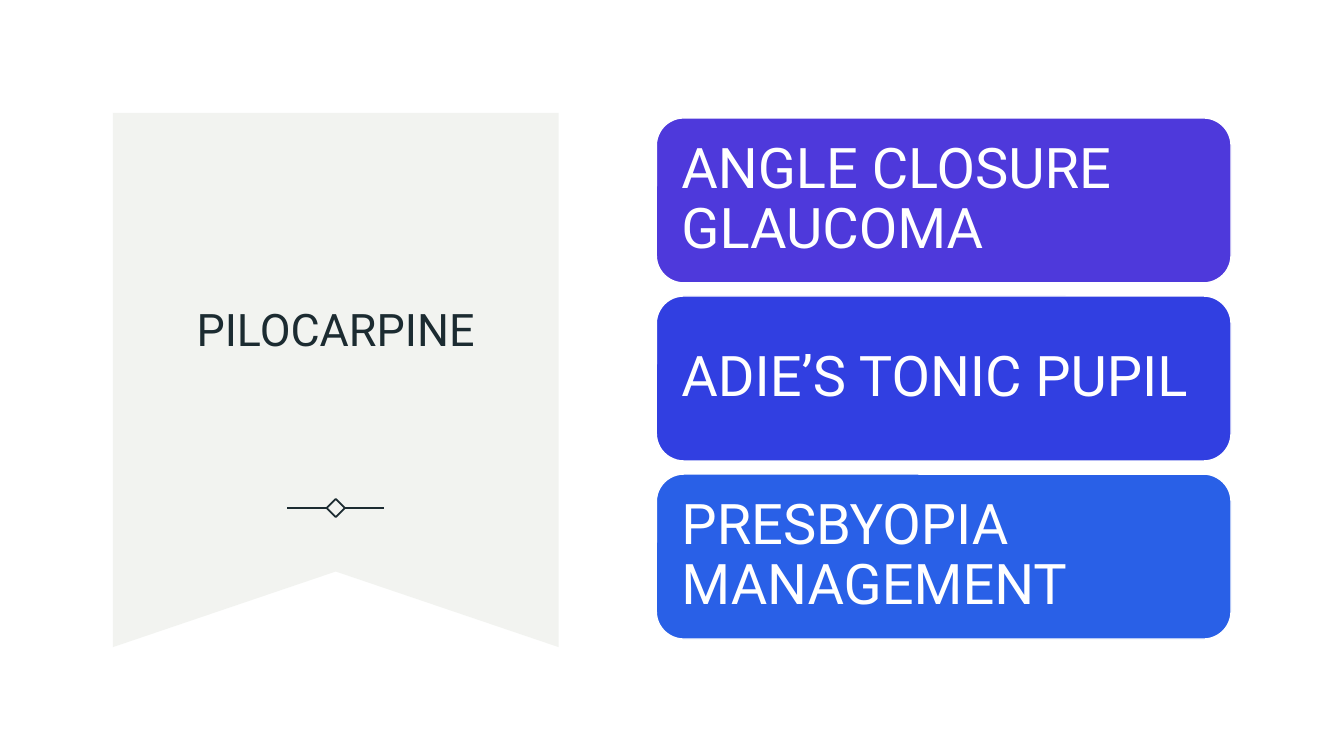
import pptx
import pptx.util
import pptx.dml.color
import pptx.enum.shapes
import pptx.enum.text
import pptx.oxml.ns
from dataclasses import dataclass
from lxml import etree

Inches = pptx.util.Inches
Pt = pptx.util.Pt
Shape = pptx.enum.shapes.MSO_SHAPE
Align = pptx.enum.text.PP_ALIGN


@dataclass(frozen=True)
class Theme:
    font: str = "Roboto"
    paper: str = "FFFFFF"
    ink: str = "1C2B31"
    ribbon: str = "F2F3F0"
    cards: tuple = ("4E39DB", "313FE1", "2960E7")
    title: int = 32
    body: int = 40
    rule: float = 1.25
    edge: float = 1


THEME = Theme()
USES = ("ANGLE CLOSURE GLAUCOMA", "ADIE’S TONIC PUPIL", "PRESBYOPIA MANAGEMENT")


def rgb(code):
    return pptx.dml.color.RGBColor.from_string(code)


def paint(shape, fill, line=None, width=0):
    """Set fill and outline; None means no paint."""
    shape.shadow.inherit = False
    if fill:
        shape.fill.solid()
        shape.fill.fore_color.rgb = rgb(fill)
    else:
        shape.fill.background()
    if line:
        shape.line.color.rgb = rgb(line)
        shape.line.width = Pt(width)
    else:
        shape.line.fill.background()


def write(shape, text, size, color, align, spacing):
    frame = shape.text_frame
    frame.word_wrap = True
    frame.vertical_anchor = pptx.enum.text.MSO_ANCHOR.MIDDLE
    para = frame.paragraphs[0]
    para.alignment = align
    para.line_spacing = spacing
    run = para.add_run()
    run.text = text
    run.font.name = THEME.font
    run.font.size = Pt(size)
    run.font.color.rgb = rgb(color)
    return frame


def add_mark(slide, x, y, size=0.18, arm=0.39):
    """Draw a diamond centred on x, y with a rule on each side."""
    gem = slide.shapes.add_shape(Shape.DIAMOND, Inches(x - size / 2),
                                 Inches(y - size / 2), Inches(size), Inches(size))
    paint(gem, None, THEME.ink, THEME.rule)
    for side, site in ((-1, 1), (1, 3)):
        near = x + side * size / 2
        rule = slide.shapes.add_connector(
            pptx.enum.shapes.MSO_CONNECTOR.STRAIGHT, Inches(near), Inches(y),
            Inches(near + side * arm), Inches(y))
        rule.begin_connect(gem, site)
        rule.line.color.rgb = rgb(THEME.ink)
        rule.line.width = Pt(THEME.rule)
        etree.SubElement(rule._element.spPr, pptx.oxml.ns.qn("a:effectLst"))


def add_ribbon(slide, text, left, top, width, height, notch=0.75):
    mid, right, base = left + width / 2, left + width, top + height
    points = ((right, top), (right, base), (mid, base - notch), (left, base))
    pen = slide.shapes.build_freeform(Inches(left), Inches(top))
    pen.add_line_segments([(Inches(x), Inches(y)) for x, y in points])
    paint(pen.convert_to_shape(), THEME.ribbon)
    pad = 0.44
    box = slide.shapes.add_textbox(Inches(left + pad), Inches(top + 0.69),
                                   Inches(width - 2 * pad), Inches(2.85))
    write(box, text, THEME.title, THEME.ink, Align.CENTER, 1.1)
    add_mark(slide, mid, top + 3.92)


def add_cards(slide, texts, left, top, width, height, gap=0.13):
    """Stack equal cards to fill the box."""
    tall = (height - gap * (len(texts) - 1)) / len(texts)
    for i, (text, fill) in enumerate(zip(texts, THEME.cards)):
        card = slide.shapes.add_shape(
            Shape.ROUNDED_RECTANGLE, Inches(left), Inches(top + i * (tall + gap)),
            Inches(width), Inches(tall))
        paint(card, fill, THEME.paper, THEME.edge)
        frame = write(card, text, THEME.body, THEME.paper, Align.LEFT, 0.9)
        frame.margin_left = frame.margin_right = Inches(0.17)
        frame.margin_top = frame.margin_bottom = Inches(0.17)


def main():
    deck = pptx.Presentation()
    deck.slide_width, deck.slide_height = Inches(13.33), Inches(7.5)
    slide = deck.slides.add_slide(deck.slide_layouts[6])
    slide.background.fill.solid()
    slide.background.fill.fore_color.rgb = rgb(THEME.paper)
    add_ribbon(slide, "PILOCARPINE", 1.12, 1.12, 4.42, 5.3)
    add_cards(slide, USES, 6.51, 1.17, 5.7, 5.17)
    deck.save("out.pptx")


if __name__ == "__main__":
    main()
